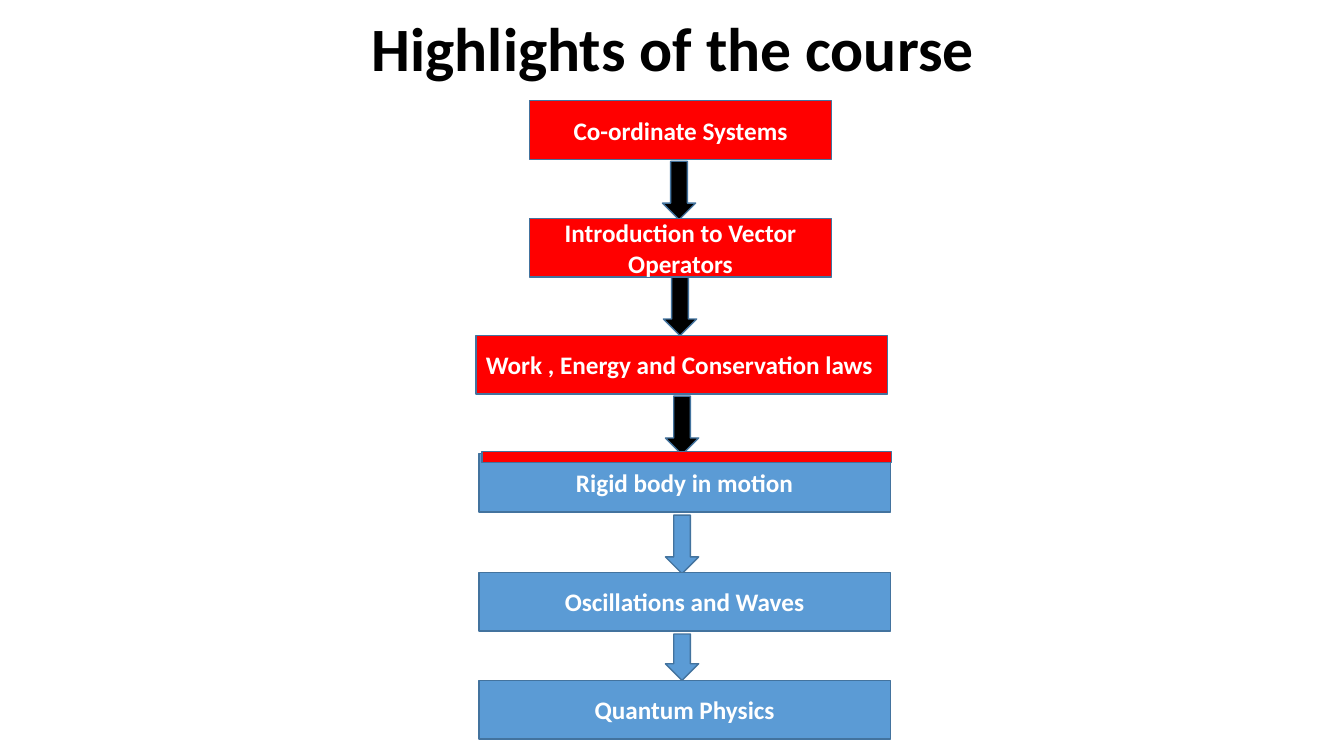
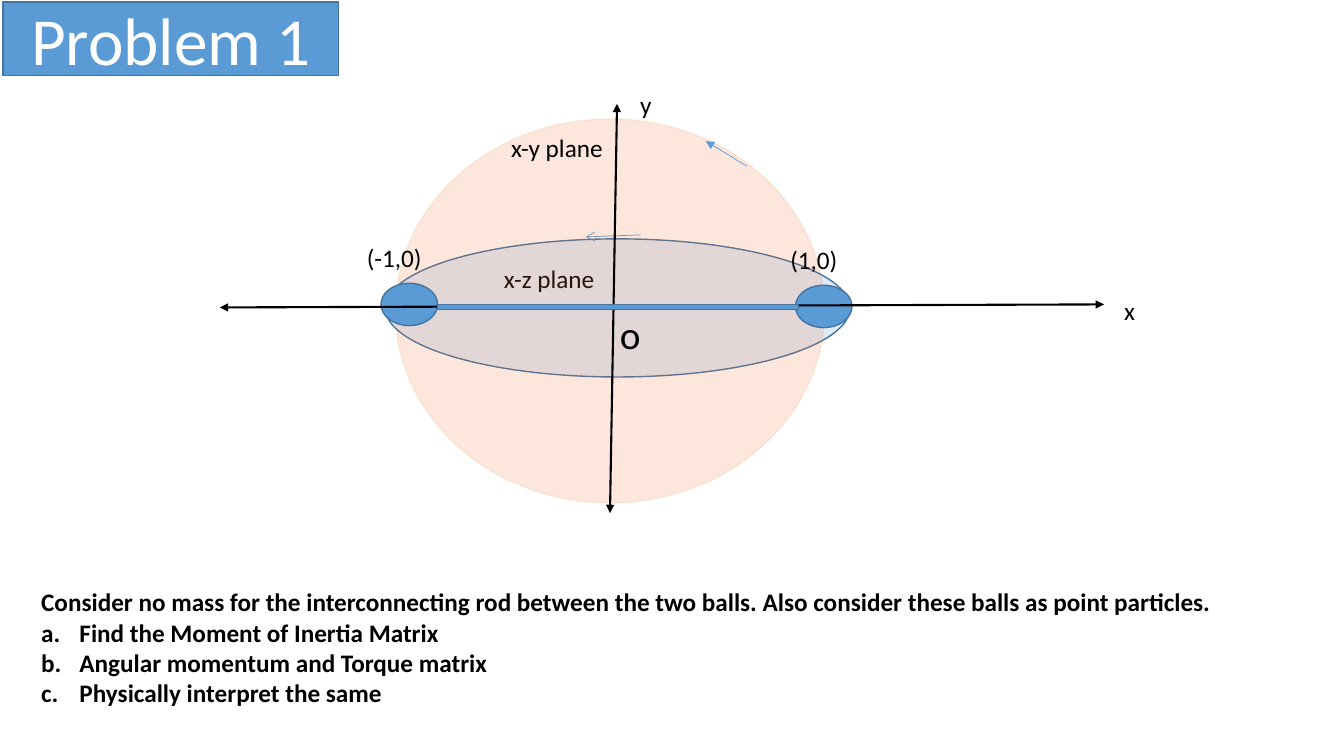
from pptx import Presentation
from pptx.dml.color import RGBColor
from pptx.enum.shapes import MSO_CONNECTOR, MSO_SHAPE
from pptx.enum.text import MSO_ANCHOR, MSO_AUTO_SIZE, PP_ALIGN
from pptx.oxml.ns import qn
from pptx.util import Inches, Pt
from lxml.etree import SubElement

COLORS = {
    "black": "000000", "white": "FFFFFF", "red": "FF0000", "blue": "5B9BD5",
    "outline": "43739E", "orange": "F6743A", "gold": "C78817",
}
FONT = "Calibri"


def add_block(page, kind, at, fill=None, text="", size=18, color="black", bold=False,
              align=PP_ALIGN.LEFT, anchor=MSO_ANCHOR.TOP, wrap=False,
              outline="outline", alpha=100, line_alpha=100):
    box_at = [Inches(length) for length in at]
    if kind is None:
        box = page.shapes.add_textbox(*box_at)
    else:
        box = page.shapes.add_shape(kind, *box_at)
        box.shadow.inherit = False
        box.line.width = Pt(1)
        box.fill.solid()
        for paint, name, opacity in ((box.fill, fill, alpha), (box.line.fill, outline, line_alpha)):
            paint.solid()
            paint.fore_color.rgb = RGBColor.from_string(COLORS[name])
        for tag, opacity in (("a:solidFill", alpha), ("a:ln/a:solidFill", line_alpha)):
            if opacity < 100:
                steps = "/".join(qn(step) for step in tag.split("/"))
                tint = box.element.spPr.find(steps)[0]
                SubElement(tint, qn("a:alpha"), val=str(opacity * 1000))
    if text:
        frame = box.text_frame
        frame.text = text
        frame.word_wrap = wrap
        frame.vertical_anchor = anchor
        for para in frame.paragraphs:
            para.alignment = align
            for span in para.runs:
                span.font.name = FONT
                span.font.size = Pt(size)
                span.font.bold = bold
                span.font.color.rgb = RGBColor.from_string(COLORS[color])
    return box


def add_line(page, start, end, color, width, head=None, tail=None):
    line = page.shapes.add_connector(
        MSO_CONNECTOR.STRAIGHT, *[Inches(length) for length in (*start, *end)])
    line.line.width = Pt(width)
    line.line.color.rgb = RGBColor.from_string(COLORS[color])
    outline = line.line._get_or_add_ln()
    for tag, arrow in (("a:headEnd", head), ("a:tailEnd", tail)):
        if arrow:
            SubElement(outline, qn(tag), type=arrow)
    SubElement(line.element.spPr, qn("a:effectLst"))


deck = Presentation()
deck.slide_width = Inches(13.33)
deck.slide_height = Inches(7.5)
blank = deck.slide_layouts[6]

page = deck.slides.add_slide(blank)
title = add_block(page, None, (3.59, 0.01, 9, 1), text="Highlights of the course", size=44,
                  bold=True, anchor=MSO_ANCHOR.MIDDLE, wrap=True)
title.text_frame.paragraphs[0].line_spacing = 0.9

topics = [
    ("Co-ordinate Systems", 5.25, 1, 3, "red", PP_ALIGN.CENTER),
    ("Introduction to Vector Operators", 5.25, 2.17, 3, "red", PP_ALIGN.CENTER),
    ("Work , Energy and Conservation laws", 4.72, 3.33, 4.08, "red", PP_ALIGN.LEFT),
    ("Rigid body in motion", 4.75, 4.5, 4.08, "blue", PP_ALIGN.CENTER),
    ("Oscillations and Waves", 4.75, 5.68, 4.08, "blue", PP_ALIGN.CENTER),
    ("Quantum Physics", 4.75, 6.75, 4.08, "blue", PP_ALIGN.CENTER),
]
arrows = [
    (6.57, 1.6, 0.58, "black"),
    (6.58, 2.75, 0.58, "black"),
    (6.6, 3.93, 0.58, "black"),
    (6.6, 5.11, 0.58, "blue"),
    (6.6, 6.29, 0.46, "blue"),
]
for left, top, height, fill in arrows:
    add_block(page, MSO_SHAPE.DOWN_ARROW, (left, top, 0.33, height), fill)
for text, left, top, width, fill, align in topics:
    add_block(page, MSO_SHAPE.RECTANGLE, (left, top, width, 0.58), fill, text, color="white",
              bold=True, align=align, anchor=MSO_ANCHOR.MIDDLE, wrap=True)
add_block(page, MSO_SHAPE.RECTANGLE, (4.78, 4.48, 4.06, 0.11), "red")

page = deck.slides.add_slide(blank)
add_block(page, MSO_SHAPE.OVAL, (3.82, 2.37, 4.61, 1.37), "blue", alpha=20)
add_line(page, (5.81, 2.35), (6.36, 2.33), "blue", 0.5, head="arrow")
add_block(page, None, (4.9, 2.56, 1.13, 0.4), text="x-z plane")
add_block(page, MSO_SHAPE.OVAL, (3.92, 1.18, 4.26, 3.81), "orange", outline="gold",
          alpha=17, line_alpha=9)

add_line(page, (4.24, 3.02), (7.92, 3.05), "blue", 0.5)
for left, top in ((3.78, 2.81), (7.89, 2.83)):
    add_block(page, MSO_SHAPE.OVAL, (left, top, 0.56, 0.42), "blue")
for start, end in (((6.05, 5.09), (6.12, 1.03)), ((2.18, 3.05), (10.95, 3.02))):
    add_line(page, start, end, "black", 1.5, head="triangle", tail="triangle")

labels = [
    ("y", 6.25, 0.84, 0.32, 0.34, 18),
    ("x", 11.05, 2.88, 0.31, 0.34, 18),
    ("o", 6.05, 3.03, 0.41, 0.49, 28),
    ("(1,0)", 7.74, 2.37, 0.68, 0.34, 18),
    ("(-1,0)", 3.54, 2.36, 0.76, 0.34, 18),
    ("x-y plane", 4.97, 1.26, 1.15, 0.4, 18),
]
for text, left, top, width, height, size in labels:
    label = add_block(page, None, (left, top, width, height), text=text, size=size)
    label.text_frame.auto_size = MSO_AUTO_SIZE.SHAPE_TO_FIT_TEXT

add_block(page, MSO_SHAPE.RECTANGLE, (0.03, 0.02, 3.33, 0.73), "blue", "Problem 1", 48, "white",
          align=PP_ALIGN.CENTER, anchor=MSO_ANCHOR.MIDDLE, wrap=True)
add_block(page, MSO_SHAPE.RECTANGLE, (4.34, 3.02, 3.58, 0.05), "blue")
add_line(page, (7.41, 1.65), (7, 1.4), "blue", 0.5, tail="triangle")

question = [
    "Consider no mass for the interconnecting rod between the two balls. "
    "Also consider these balls as point particles.",
    "Find the Moment of Inertia Matrix",
    "Angular momentum and Torque matrix",
    "Physically interpret the same",
]
box = add_block(page, None, (0.31, 5.77, 11.95, 1.62), text="\n".join(question), bold=True)
for para in box.text_frame.paragraphs[1:]:
    properties = para._p.get_or_add_pPr()
    properties.set("marL", str(Inches(0.38)))
    properties.set("indent", str(Inches(-0.38)))
    SubElement(properties, qn("a:buFont"), typeface="+mj-lt")
    SubElement(properties, qn("a:buAutoNum"), type="alphaLcPeriod")

deck.save("out.pptx")
